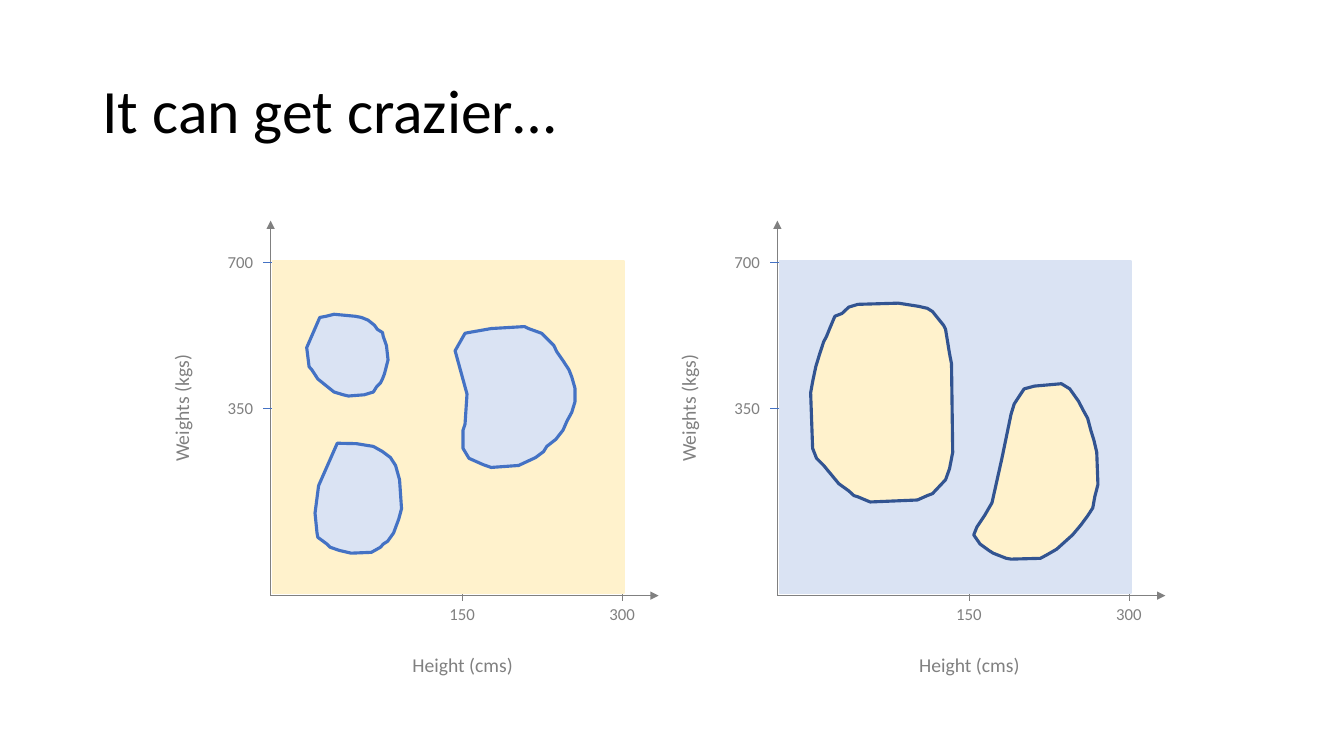
from lxml.etree import SubElement
from pptx import Presentation
from pptx.dml.color import RGBColor
from pptx.enum.shapes import MSO_CONNECTOR, MSO_SHAPE
from pptx.enum.text import MSO_ANCHOR, MSO_AUTO_SIZE, PP_ALIGN
from pptx.oxml.ns import qn
from pptx.util import Cm, Pt

GREY, BLUE, NAVY = "808080", "4472C4", "325491"
CREAM, PALE_BLUE = "FFF2CC", "DAE3F3"
FONT = "Calibri"
AXIS_WIDTH, AXIS_HEIGHT = 9.78, 9.45
HEIGHT_TICKS = [(8.86, "300"), (4.83, "150")]
WEIGHT_TICKS = [(1.04, "700"), (4.72, "350")]

SMALL_UPPER_REGION = [
    (1.24, 2.44), (0.91, 3.2), (0.97, 3.68), (1.04, 3.76), (1.19, 3.99), (1.5, 4.24),
    (1.6, 4.32), (1.83, 4.39), (1.96, 4.42), (2.36, 4.39), (2.59, 4.32), (2.67, 4.19),
    (2.77, 4.09), (2.82, 3.99), (2.87, 3.86), (2.96, 3.51), (2.92, 3.15), (2.84, 2.92),
    (2.82, 2.82), (2.69, 2.74), (2.62, 2.64), (2.46, 2.51), (2.29, 2.44), (2.13, 2.41),
    (1.6, 2.36), (1.4, 2.41),
]
RIGHT_BEAN_REGION = [
    (4.65, 3.28), (4.95, 4.37), (4.9, 5.13), (4.85, 5.28), (4.85, 5.74), (5.0, 5.99),
    (5.36, 6.15), (5.56, 6.22), (6.25, 6.17), (6.68, 5.97), (6.88, 5.82), (6.96, 5.69),
    (7.19, 5.51), (7.37, 5.28), (7.47, 5.05), (7.59, 4.83), (7.67, 4.57), (7.67, 4.22),
    (7.59, 3.94), (7.52, 3.76), (7.37, 3.53), (7.21, 3.3), (7.14, 3.15), (6.96, 2.97),
    (6.83, 2.84), (6.5, 2.72), (6.4, 2.67), (5.56, 2.72), (5.0, 2.82), (4.9, 2.84),
    (4.78, 3.05),
]
SMALL_LOWER_REGION = [
    (1.68, 5.61), (1.21, 6.68), (1.12, 7.37), (1.17, 7.87), (1.19, 7.98), (1.42, 8.15),
    (1.5, 8.23), (1.73, 8.31), (2.03, 8.38), (2.54, 8.36), (2.77, 8.23), (2.84, 8.15),
    (2.95, 8.08), (3.1, 7.87), (3.23, 7.52), (3.3, 7.26), (3.25, 6.53), (3.15, 6.17),
    (3.02, 5.97), (2.82, 5.82), (2.59, 5.69), (2.16, 5.62),
]
LARGE_OVAL_REGION = [
    (1.45, 2.41), (1.32, 2.72), (1.24, 2.92), (1.17, 3.05), (1.07, 3.35), (0.97, 3.68),
    (0.89, 4.06), (0.84, 4.34), (0.89, 5.74), (0.99, 5.99), (1.17, 6.17), (1.55, 6.63),
    (1.8, 6.81), (1.93, 6.93), (2.03, 6.96), (2.34, 7.09), (3.53, 7.04), (3.78, 6.93),
    (3.91, 6.88), (4.24, 6.53), (4.34, 6.25), (4.42, 5.84), (4.39, 3.61), (4.34, 3.35),
    (4.24, 2.74), (4.19, 2.64), (3.91, 2.29), (3.78, 2.21), (3.56, 2.16), (3.05, 2.08),
    (2.03, 2.11), (1.8, 2.18), (1.63, 2.34),
]
LEANING_REGION = [
    (5.89, 4.88), (5.66, 5.99), (5.41, 7.11), (5.23, 7.42), (5.03, 7.72), (4.95, 7.92),
    (5.11, 8.15), (5.33, 8.31), (5.44, 8.38), (5.77, 8.51), (5.89, 8.53), (6.63, 8.51),
    (6.78, 8.43), (7.04, 8.28), (7.44, 7.92), (7.65, 7.67), (7.82, 7.44), (7.95, 7.24),
    (8.0, 6.96), (8.08, 6.65), (8.05, 5.84), (7.98, 5.54), (7.9, 5.28), (7.82, 4.98),
    (7.72, 4.8), (7.59, 4.55), (7.37, 4.24), (7.16, 4.11), (6.48, 4.17), (6.22, 4.24),
    (6.1, 4.42), (5.97, 4.62),
]


def color(hex_string):
    return RGBColor.from_string(hex_string)


def add_run(paragraph, text, size, hex_string):
    run = paragraph.add_run()
    run.text = text
    run.font.name = FONT
    run.font.size = Pt(size)
    run.font.color.rgb = color(hex_string)


def style_shape(shape, fill, outline, width):
    shape.shadow.inherit = False
    shape.fill.solid()
    shape.fill.fore_color.rgb = color(fill)
    shape.line.color.rgb = color(outline)
    shape.line.width = Pt(width)


def add_line(shapes, start, end, hex_string, arrow=False):
    line = shapes.add_connector(
        MSO_CONNECTOR.STRAIGHT, Cm(start[0]), Cm(start[1]), Cm(end[0]), Cm(end[1])
    )
    line.line.color.rgb = color(hex_string)
    line.line.width = Pt(0.5)
    if arrow:
        SubElement(line.line._get_or_add_ln(), qn("a:tailEnd"), type="triangle")
    SubElement(line._element.spPr, qn("a:effectLst"))


def add_label(shapes, text, center, width, height, size, rotation=0):
    label = shapes.add_textbox(
        Cm(center[0] - width / 2), Cm(center[1] - height / 2), Cm(width), Cm(height)
    )
    label.rotation = rotation
    frame = label.text_frame
    frame.word_wrap = False
    frame.auto_size = MSO_AUTO_SIZE.SHAPE_TO_FIT_TEXT
    paragraph = frame.paragraphs[0]
    paragraph.alignment = PP_ALIGN.CENTER
    add_run(paragraph, text, size, GREY)


def add_tick(slide, text, start, end, label_center, hex_string):
    tick = slide.shapes.add_group_shape()
    add_line(tick.shapes, start, end, hex_string)
    add_label(tick.shapes, text, label_center, 1.17, 0.77, 12)


def add_axes(slide, left, top, width, height):
    bottom = top + height
    add_line(slide.shapes, (left, bottom), (left, top), GREY, arrow=True)
    add_line(slide.shapes, (left, bottom), (left + width, bottom), GREY, arrow=True)
    add_label(slide.shapes, "Height (cms)", (left + 4.84, bottom + 1.74), 3.07, 0.86, 14)
    add_label(slide.shapes, "Weights (kgs)", (left - 2.24, top + 4.73), 3.23, 0.86, 14, 270)
    for offset, text in HEIGHT_TICKS:
        x = left + offset
        add_tick(slide, text, (x, bottom - 0.13), (x, bottom + 0.13), (x, bottom + 0.46), GREY)
    for offset, text in WEIGHT_TICKS:
        y = top + offset
        add_tick(slide, text, (left + 0.13, y), (left - 0.18, y), (left - 0.76, y), BLUE)


def add_region(slide, left, top, points, fill, outline):
    corners = [(Cm(left + x), Cm(top + y)) for x, y in points]
    builder = slide.shapes.build_freeform(*corners[0])
    builder.add_line_segments(corners[1:], close=True)
    style_shape(builder.convert_to_shape(), fill, outline, 2.25)


def add_plot(slide, left, top, background, regions, fill, outline):
    add_axes(slide, left, top, AXIS_WIDTH, AXIS_HEIGHT)
    plot_area = slide.shapes.add_shape(
        MSO_SHAPE.RECTANGLE, Cm(left + 0.05), Cm(top + 1.02), Cm(8.86), Cm(8.36)
    )
    style_shape(plot_area, background, background, 1)
    for points in regions:
        add_region(slide, left, top, points, fill, outline)


def add_title(slide, left, top, width, height):
    title = slide.shapes.title
    title.left, title.top, title.width, title.height = Cm(left), Cm(top), Cm(width), Cm(height)
    frame = title.text_frame
    frame.word_wrap = True
    frame.vertical_anchor = MSO_ANCHOR.MIDDLE
    paragraph = frame.paragraphs[0]
    paragraph.alignment = PP_ALIGN.LEFT
    paragraph.line_spacing = 0.9
    add_run(paragraph, "It can get crazier…", 44, "000000")


def main():
    presentation = Presentation()
    presentation.slide_width, presentation.slide_height = Cm(33.87), Cm(19.05)
    slide = presentation.slides.add_slide(presentation.slide_layouts[5])
    add_title(slide, 2.33, 1.01, 29.21, 3.68)
    left_regions = [SMALL_UPPER_REGION, RIGHT_BEAN_REGION, SMALL_LOWER_REGION]
    right_regions = [LARGE_OVAL_REGION, LEANING_REGION]
    add_plot(slide, 6.82, 5.56, CREAM, left_regions, PALE_BLUE, BLUE)
    add_plot(slide, 19.59, 5.56, PALE_BLUE, right_regions, CREAM, NAVY)
    presentation.save("out.pptx")


if __name__ == "__main__":
    main()
